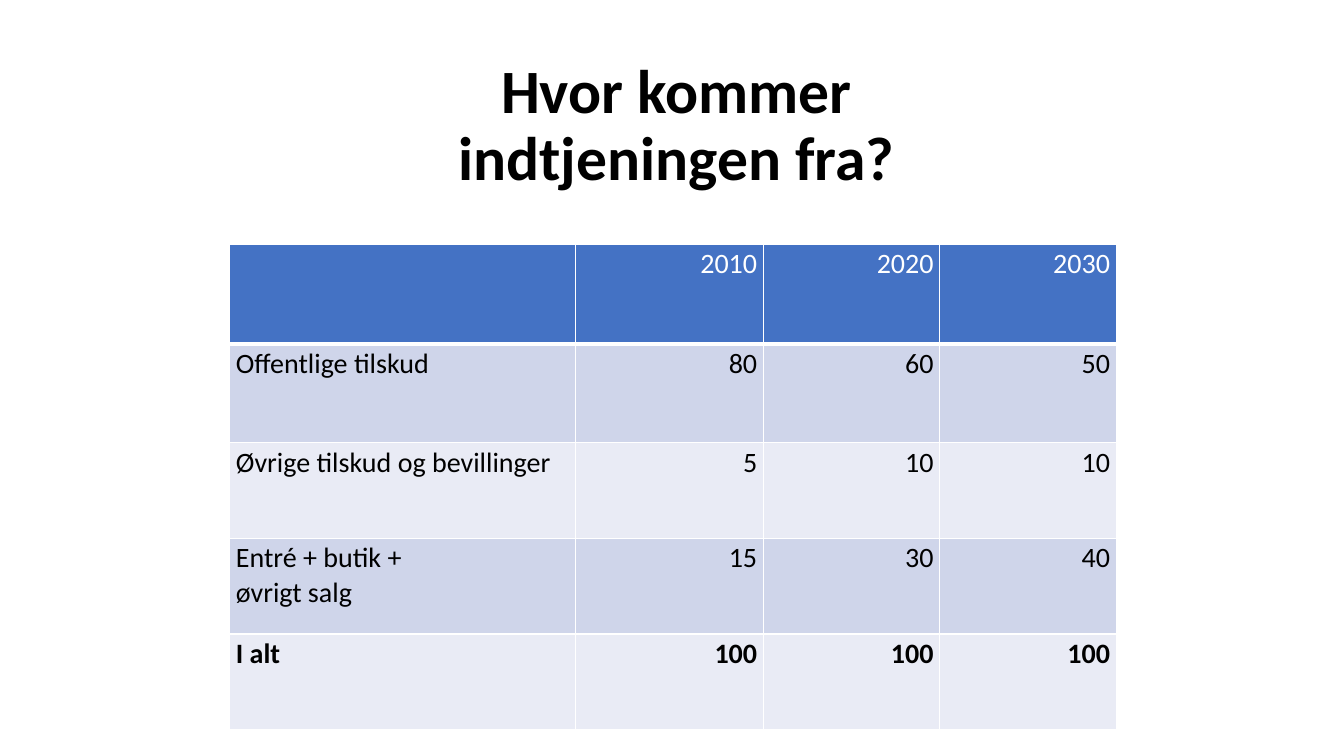
from lxml import etree
from pptx import Presentation
from pptx.dml.color import RGBColor
from pptx.enum.text import MSO_ANCHOR, MSO_AUTO_SIZE, PP_ALIGN
from pptx.oxml.ns import qn
from pptx.util import Inches, Pt

LEFT, CENTER, RIGHT = PP_ALIGN.LEFT, PP_ALIGN.CENTER, PP_ALIGN.RIGHT
MIDDLE = MSO_ANCHOR.MIDDLE
NO_FIT = MSO_AUTO_SIZE.NONE

COLORS = {
    "black": "000000",
    "white": "FFFFFF",
    "header": "4472C4",
    "odd": "CFD5EA",
    "even": "E9EBF5",
}
TITLE_FONT = {"name": "Calibri", "size": Pt(44), "bold": True}
CELL_FONT = {"name": "Calibri", "size": Pt(20), "bold": False}
MARGINS = {
    "margin_left": Inches(0.06),
    "margin_right": Inches(0.06),
    "margin_top": Inches(0.03),
    "margin_bottom": Inches(0.03),
}
COLUMNS = [3.43, 1.86, 1.75, 1.75]
ROWS = [0.99, 0.98, 0.95, 0.95, 0.95]
INCOME = [
    ["", "2010", "2020", "2030"],
    ["Offentlige tilskud", "80", "60", "50"],
    ["Øvrige tilskud og bevillinger", "5", "10", "10"],
    ["Entré + butik +\nøvrigt salg", "15", "30", "40"],
    ["I alt", "100", "100", "100"],
]


def rgb(name):
    return RGBColor.from_string(COLORS[name])


def apply(target, values):
    for name, value in values.items():
        setattr(target, name, value)


def format_text(tf, font, color, align):
    for p in tf.paragraphs:
        p.alignment = align
        for r in p.runs:
            apply(r.font, font)
            r.font.color.rgb = rgb(color)


def add_title(s, text, left, top, width, height):
    sp = s.shapes.title
    apply(sp, {"left": Inches(left), "top": Inches(top),
               "width": Inches(width), "height": Inches(height)})
    tf = sp.text_frame
    tf.text = text
    apply(tf, {"word_wrap": True, "auto_size": NO_FIT, "vertical_anchor": MIDDLE})
    tf.paragraphs[0].line_spacing = 0.9
    format_text(tf, TITLE_FONT, "black", CENTER)


def set_borders(cell, widths):
    tcPr = cell._tc.get_or_add_tcPr()
    for i, (side, width) in enumerate(widths.items()):
        ln = etree.Element(qn(f"a:ln{side}"), w=str(Pt(width)))
        fill = etree.SubElement(ln, qn("a:solidFill"))
        etree.SubElement(fill, qn("a:srgbClr"), val=COLORS["white"])
        tcPr.insert(i, ln)


def format_cell(cell, text, row, column):
    is_header = row == 0
    is_total = row == len(INCOME) - 1
    fill = "header" if is_header else "odd" if row % 2 else "even"
    cell.text = text
    apply(cell, MARGINS)
    cell.fill.solid()
    cell.fill.fore_color.rgb = rgb(fill)
    format_text(cell.text_frame, {**CELL_FONT, "bold": is_total},
                "white" if is_header else "black", RIGHT if column else LEFT)
    set_borders(cell, {"L": 1, "R": 1, "T": 1, "B": 3 if is_header else 1})


def add_income_table(s, left, top):
    frame = s.shapes.add_table(len(ROWS), len(COLUMNS), Inches(left), Inches(top),
                               Inches(sum(COLUMNS)), Inches(sum(ROWS)))
    table = frame.table
    for column, width in zip(table.columns, COLUMNS):
        column.width = Inches(width)
    for row, height in zip(table.rows, ROWS):
        row.height = Inches(height)
    for i, values in enumerate(INCOME):
        for j, text in enumerate(values):
            format_cell(table.cell(i, j), text, i, j)


def main():
    prs = Presentation()
    prs.slide_width, prs.slide_height = Inches(13.33), Inches(7.5)
    s = prs.slides.add_slide(prs.slide_layouts[5])
    add_title(s, "Hvor kommer indtjeningen fra?", 4.05, 0.54, 5.32, 1.44)
    add_income_table(s, 2.28, 2.42)
    prs.save("out.pptx")


if __name__ == "__main__":
    main()
